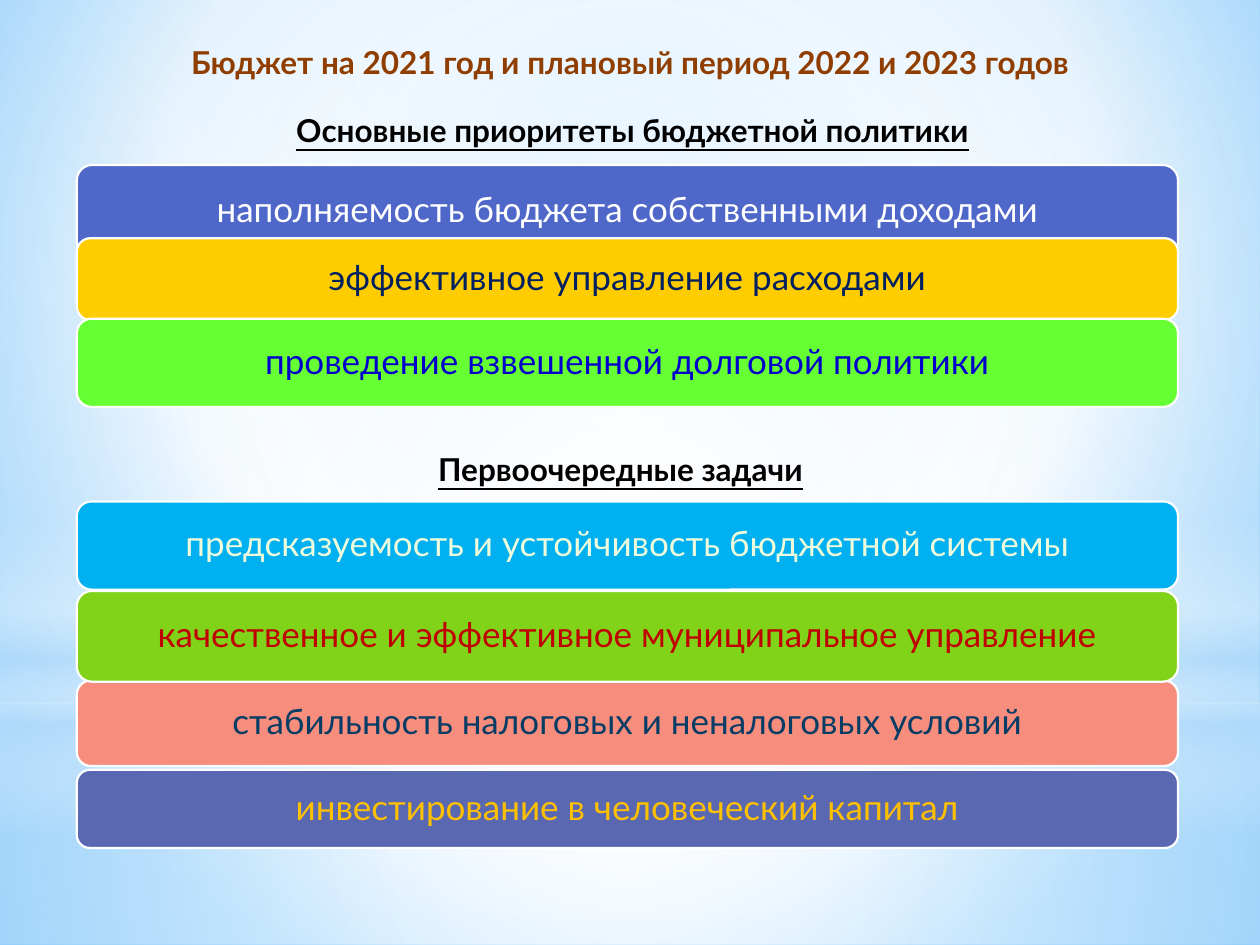
"""Builds the slide on budget priorities and first tasks for 2021-2023."""
import lxml.etree
import pptx
import pptx.dml.color
import pptx.enum.shapes
import pptx.enum.text
import pptx.oxml.ns
import pptx.util

Inches = pptx.util.Inches
Shapes = pptx.enum.shapes.MSO_SHAPE
Align = pptx.enum.text.PP_ALIGN

FONT = "Lato"
BAR_LEFT, BAR_WIDTH, BAR_INSET = 0.61, 8.74, 0.11
COLORS = {
    "white": "FFFFFF", "haze": "B4DCFA", "sky": "9ED5FF", "azure": "5BB9FF",
    "brown": "903E00", "black": "000000", "salmon": "F78D7C", "slate": "5968B0",
    "indigo": "4E67C8", "yellow": "FFCC00", "cyan": "00B0F0", "olive": "81D31A",
    "green": "66FF33", "petrol": "073C65", "gold": "FFC000", "navy": "002060",
    "cream": "EDFBDC", "red": "C00000", "blue": "0000CC",
}
CENTER = (50, 50, 50, 50)
BACKDROP = [(0, "sky", 100), (60, "white", 100), (100, "azure", 100)]
LAYERS = [
    (Shapes.RECTANGLE, 5.58, 1.92, CENTER,
     [(0, "white", 91), (37, "white", 76), (100, "haze", 79)]),
    (Shapes.RECTANGLE, 0, 5.58, CENTER,
     [(0, "white", 89), (48, "white", 62), (100, "haze", 79)]),
    (Shapes.RECTANGLE, 4.12, 2.5, None,
     [(0, "white", 0), (29, "white", 30), (45, "haze", 40),
      (55, "white", 26), (65, "haze", 60), (100, "white", 0)]),
    (Shapes.OVAL, 1.75, 5.58, CENTER, [(0, "white", 100), (56, "white", 0)]),
]
BARS = [
    (5.4, 0.68, "salmon", "petrol", "стабильность налоговых и неналоговых условий"),
    (6.11, 0.62, "slate", "gold", "инвестирование в человеческий капитал"),
    (1.31, 0.73, "indigo", "white", "наполняемость бюджета собственными доходами"),
    (1.89, 0.65, "yellow", "navy", "эффективное управление расходами"),
    (3.98, 0.7, "cyan", "cream", "предсказуемость и устойчивость бюджетной системы"),
    (4.69, 0.72, "olive", "red", "качественное и эффективное муниципальное управление"),
    (2.53, 0.7, "green", "blue", "проведение взвешенной долговой политики"),
]


def rgb(name):
    """Return the named colour."""
    return pptx.dml.color.RGBColor.from_string(COLORS[name])


def set_gradient(fill, owner, stops, focus=None):
    """Fill the owner with a circular gradient, or a vertical one without focus."""
    fill.gradient()
    tag = pptx.oxml.ns.qn
    gradient = next(owner.iter(tag("a:gradFill")))
    for child in list(gradient):
        gradient.remove(child)
    stop_list = lxml.etree.SubElement(gradient, tag("a:gsLst"))
    for position, name, opacity in stops:
        stop = lxml.etree.SubElement(stop_list, tag("a:gs"), pos=str(position * 1000))
        color = lxml.etree.SubElement(stop, tag("a:srgbClr"), val=COLORS[name])
        if opacity < 100:
            lxml.etree.SubElement(color, tag("a:alpha"), val=str(opacity * 1000))
    if focus is None:
        lxml.etree.SubElement(gradient, tag("a:lin"), ang="5400000", scaled="0")
    else:
        circle = lxml.etree.SubElement(gradient, tag("a:path"), path="circle")
        sides = {side: str(value * 1000) for side, value in zip("ltrb", focus)}
        lxml.etree.SubElement(circle, tag("a:fillToRect"), **sides)


def add_layer(page, kind, top, height, focus, stops):
    """Add a full-width backdrop shape with a gradient."""
    layer = page.shapes.add_shape(kind, 0, Inches(top), Inches(10), Inches(height))
    layer.shadow.inherit = False
    layer.line.fill.background()
    set_gradient(layer.fill, layer._element, stops, focus)


def add_span(para, text, size, color, bold=False, underline=False):
    """Add one formatted run to a paragraph."""
    span = para.add_run()
    span.text = text
    span.font.name = FONT
    span.font.size = pptx.util.Pt(size)
    span.font.color.rgb = rgb(color)
    span.font.bold = bold
    span.font.underline = underline


def add_heading(page, left, top, width, text, color="black", underline=True,
                wrap=True, align=Align.CENTER):
    """Add a bold heading in a text box."""
    box = page.shapes.add_textbox(Inches(left), Inches(top), Inches(width), Inches(0.4))
    frame = box.text_frame
    frame.word_wrap = wrap
    frame.auto_size = pptx.enum.text.MSO_AUTO_SIZE.SHAPE_TO_FIT_TEXT
    para = frame.paragraphs[0]
    para.alignment = align
    add_span(para, text, 18, color, bold=True, underline=underline)


def add_bar(page, top, height, fill, color, text):
    """Add a rounded bar with centred text."""
    bar = page.shapes.add_shape(Shapes.ROUNDED_RECTANGLE, Inches(BAR_LEFT),
                                Inches(top), Inches(BAR_WIDTH), Inches(height))
    bar.shadow.inherit = False
    bar.fill.solid()
    bar.fill.fore_color.rgb = rgb(fill)
    bar.line.color.rgb = rgb("white")
    bar.line.width = pptx.util.Pt(1.25)
    frame = bar.text_frame
    frame.word_wrap = True
    frame.vertical_anchor = pptx.enum.text.MSO_ANCHOR.MIDDLE
    frame.margin_left = frame.margin_right = Inches(BAR_INSET)
    frame.margin_top = frame.margin_bottom = Inches(BAR_INSET)
    para = frame.paragraphs[0]
    para.alignment = Align.CENTER
    para.line_spacing = 0.9
    add_span(para, text, 20, color)


def main():
    """Build and save the deck."""
    deck = pptx.Presentation()
    deck.slide_width, deck.slide_height = Inches(10), Inches(7.5)
    page = deck.slides.add_slide(deck.slide_layouts[6])
    set_gradient(page.background.fill, page._element, BACKDROP, (20, 10, 20, 60))
    for layer in LAYERS:
        add_layer(page, *layer)
    add_heading(page, 0.59, 0.29, 8.82,
                "Бюджет на 2021 год и плановый период 2022 и 2023 годов",
                color="brown", underline=False)
    for bar in BARS:
        add_bar(page, *bar)
    add_heading(page, 1.99, 0.83, 6.06, "Основные приоритеты бюджетной политики")
    add_heading(page, 3.38, 3.52, 3.23, "Первоочередные задачи",
                wrap=False, align=Align.LEFT)
    deck.save("out.pptx")


if __name__ == "__main__":
    main()
